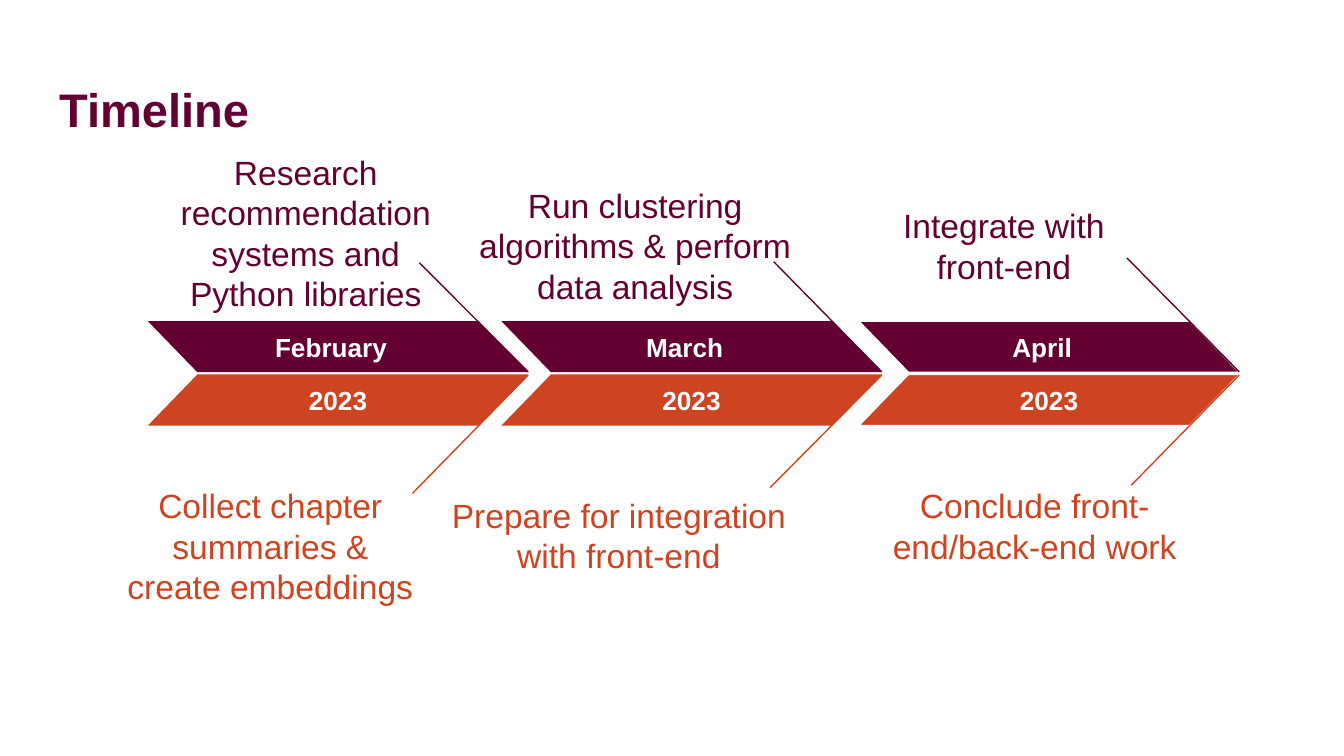
from dataclasses import dataclass

from lxml import etree
from pptx import Presentation
from pptx.dml import color
from pptx.enum import shapes, text
from pptx.oxml import ns
from pptx.util import Pt


@dataclass(frozen=True)
class Theme:
    plum: str = "630031"
    rust: str = "CF4420"
    white: str = "FFFFFF"
    font: str = "Arial"
    head: float = 25.2
    note: float = 18
    label: float = 14
    line: float = 0.75
    inset: float = 7.2


class Deck:
    def __init__(self, theme, width, height):
        self.theme = theme
        self.file = Presentation()
        self.file.slide_width, self.file.slide_height = Pt(width), Pt(height)
        self.slide = self.file.slides.add_slide(self.file.slide_layouts[5])

    def label(self, frame, words, size, tint, bold=False, align="CENTER", anchor="MIDDLE"):
        frame.word_wrap = True
        frame.margin_left = frame.margin_right = Pt(self.theme.inset)
        frame.margin_top = frame.margin_bottom = Pt(self.theme.inset)
        frame.vertical_anchor = text.MSO_ANCHOR[anchor]
        para = frame.paragraphs[0]
        para.alignment = text.PP_ALIGN[align]
        run = para.add_run()
        run.text = words
        font = run.font
        font.name, font.size, font.bold = self.theme.font, Pt(size), bold
        font.color.rgb = color.RGBColor.from_string(tint)

    def title(self, words, left, top, width, height):
        box = self.slide.shapes.title
        box.left, box.top, box.width, box.height = map(Pt, (left, top, width, height))
        self.label(box.text_frame, words, self.theme.head, self.theme.plum, True, "LEFT")

    def note(self, words, left, top, width, height, tint):
        box = self.slide.shapes.add_textbox(*map(Pt, (left, top, width, height)))
        self.label(box.text_frame, words, self.theme.note, tint, anchor="TOP")

    def band(self, words, left, top, width, height, tint, flip=False, edge=False):
        kind = shapes.MSO_SHAPE.PARALLELOGRAM
        band = self.slide.shapes.add_shape(kind, *map(Pt, (left, top, width, height)))
        band.adjustments[0] = 0.97
        band.shadow.inherit = False
        band.fill.solid()
        band.fill.fore_color.rgb = color.RGBColor.from_string(tint)
        if edge:
            band.line.color.rgb = color.RGBColor.from_string(self.theme.white)
            band.line.width = Pt(self.theme.line)
        else:
            band.line.fill.background()
        self.label(band.text_frame, words, self.theme.label, self.theme.white, True)
        if flip:
            band.element.spPr.get_or_add_xfrm().set("flipH", "1")
            band.text_frame.margin_right = Pt(self.theme.inset * 2)

    def line(self, start, end, tint):
        kind = shapes.MSO_CONNECTOR.STRAIGHT
        line = self.slide.shapes.add_connector(kind, *map(Pt, start + end))
        line.line.color.rgb = color.RGBColor.from_string(tint)
        line.line.width = Pt(self.theme.line)
        etree.SubElement(line.element.spPr, ns.qn("a:effectLst"))

    def save(self):
        self.file.save("out.pptx")


def main():
    theme = Theme()
    deck = Deck(theme, 720, 405)
    deck.title("Timeline", 24.5, 35.3, 671, 45.4)

    wide, tall = 203.8, 27.4
    upper, lower = 172, 200.6
    months = [("February", 79.2, False), ("March", 268.6, False), ("April", 460.1, True)]
    for month, left, edge in months:
        deck.band(month, left, upper, wide, tall, theme.plum, True, edge)
        deck.band("2023", left, lower, wide, tall, theme.rust, edge=edge)

    above = [
        ("Research recommendation systems and Python libraries", 79.2, 74.2, 169.2, 101.5),
        ("Run clustering algorithms & perform data analysis", 243.4, 91.8, 193.7, 80),
        ("Integrate with front-end", 453.2, 102.7, 169.2, 58.3),
    ]
    below = [
        ("Collect chapter summaries & create embeddings", 60.2, 252.7, 169.2, 80),
        ("Prepare for integration with front-end", 234.7, 258, 193.7, 80),
        ("Conclude front-end/back-end work", 469.7, 252.7, 169.2, 80),
    ]
    rises = [(224.7, 140.8), (414.5, 140.2), (603.7, 138.2)]
    falls = [(221, 264.3), (412.6, 261.2), (606, 260)]
    sides = [(above, rises, 199.2, theme.plum), (below, falls, 200.9, theme.rust)]
    for notes, starts, level, tint in sides:
        for note, start, (_, left, _) in zip(notes, starts, months):
            deck.note(*note, tint)
            deck.line(start, (left + wide, level), tint)
    deck.save()


if __name__ == "__main__":
    main()
